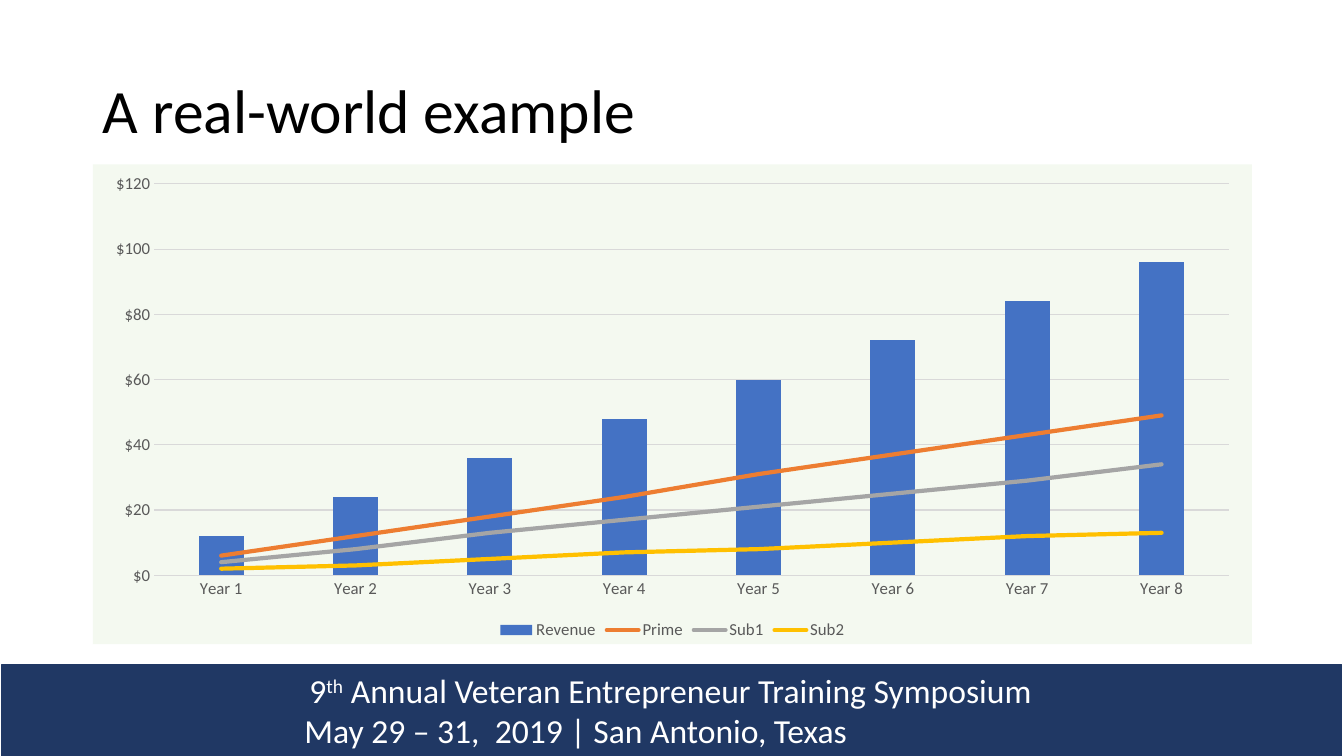
from dataclasses import dataclass

from lxml.etree import SubElement
from pptx import Presentation
from pptx.chart.chart import Chart
from pptx.chart.data import CategoryChartData
from pptx.dml.color import RGBColor
from pptx.enum.chart import XL_CHART_TYPE, XL_LEGEND_POSITION, XL_MARKER_STYLE, XL_TICK_MARK
from pptx.enum.shapes import MSO_SHAPE
from pptx.enum.text import MSO_ANCHOR, MSO_AUTO_SIZE, PP_ALIGN
from pptx.oxml import parse_xml
from pptx.oxml.ns import nsdecls, qn
from pptx.slide import Slide
from pptx.text.text import Font
from pptx.util import Cm, Pt

NAVY, GREY, GRID = "203864", "595959", "D9D9D9"
TITLE_FONT = {"name": "Calibri", "size": Pt(44)}
BANNER_FONT = {"name": "Calibri", "size": Pt(24)}
CHART_FONT = {"name": "Calibri", "size": Pt(12)}


@dataclass
class Series:
    name: str
    values: list[int]
    color: str


@dataclass
class BannerLine:
    indent: float
    runs: list[tuple[str, int]]  # text and baseline shift in percent


YEARS = [f"Year {n}" for n in range(1, 9)]
SERIES = [
    Series("Revenue", [12, 24, 36, 48, 60, 72, 84, 96], "4472C4"),
    Series("Prime", [6, 12, 18, 24, 31, 37, 43, 49], "ED7D31"),
    Series("Sub1", [4, 8, 13, 17, 21, 25, 29, 34], "A5A5A5"),
    Series("Sub2", [2, 3, 5, 7, 8, 10, 12, 13], "FFC000"),
]
BANNER = [
    BannerLine(7.5, [("9", 0), ("th", 30), (" Annual Veteran Entrepreneur Training Symposium", 0)]),
    BannerLine(7.37, [("May 29 – 31,  2019 | San Antonio, Texas", 0)]),
]


def rgb(color: str) -> RGBColor:
    return RGBColor.from_string(color)


def set_attrs(target: object, values: dict) -> None:
    for name, value in values.items():
        setattr(target, name, value)


def set_font(font: Font, values: dict, color: str) -> None:
    set_attrs(font, values)
    font.color.rgb = rgb(color)


def set_line(line, color: str, width: float) -> None:
    line.color.rgb = rgb(color)
    line.width = Pt(width)


def add_banner(s: Slide) -> None:
    sp = s.shapes.add_shape(MSO_SHAPE.RECTANGLE, Cm(0.05), Cm(16.74), Cm(33.76), Cm(2.31))
    sp.shadow.inherit = False
    sp.fill.solid()
    sp.fill.fore_color.rgb = rgb(NAVY)
    set_line(sp.line, NAVY, 1)
    tf = sp.text_frame
    set_attrs(tf, {"word_wrap": True, "vertical_anchor": MSO_ANCHOR.MIDDLE})
    for i, line in enumerate(BANNER):
        p = tf.add_paragraph() if i else tf.paragraphs[0]
        p.alignment = PP_ALIGN.LEFT
        p._p.get_or_add_pPr().set("marL", str(Cm(line.indent)))
        for text, shift in line.runs:
            r = p.add_run()
            r.text = text
            set_font(r.font, BANNER_FONT, "FFFFFF")
            if shift:
                r._r.get_or_add_rPr().set("baseline", str(shift * 1000))


def set_title(s: Slide) -> None:
    sp = s.shapes.title
    set_attrs(sp, {"left": Cm(2.34), "top": Cm(1.02), "width": Cm(29.21), "height": Cm(3.68)})
    tf = sp.text_frame
    set_attrs(tf, {"auto_size": MSO_AUTO_SIZE.NONE, "word_wrap": True,
                   "vertical_anchor": MSO_ANCHOR.MIDDLE})
    p = tf.paragraphs[0]
    set_attrs(p, {"alignment": PP_ALIGN.LEFT, "line_spacing": 0.9})
    r = p.add_run()
    r.text = "A real-world example"
    set_font(r.font, TITLE_FONT, "000000")


def move_to_lines(chart: Chart) -> None:
    """Turn every series after the first into a line on the same axes."""
    bars = chart.plots[0]._element
    lines = parse_xml(
        f'<c:lineChart {nsdecls("c")}><c:grouping val="standard"/><c:varyColors val="0"/></c:lineChart>')
    for ser in bars.findall(qn("c:ser"))[1:]:
        for bar_only in ser.findall(qn("c:invertIfNegative")):
            ser.remove(bar_only)
        lines.append(ser)
    SubElement(lines, qn("c:marker")).set("val", "1")
    for axis in bars.findall(qn("c:axId")):
        SubElement(lines, qn("c:axId")).set("val", axis.get("val"))
    bars.addnext(lines)


def fill_background(chart: Chart, color: str, opacity: int) -> None:
    space = chart._chartSpace
    space.find(qn("c:chart")).addnext(parse_xml(
        f'<c:spPr {nsdecls("c", "a")}><a:solidFill><a:srgbClr val="{color}">'
        f'<a:alpha val="{opacity * 1000}"/></a:srgbClr></a:solidFill>'
        f'<a:ln><a:noFill/></a:ln></c:spPr>'))


def format_axes(chart: Chart) -> None:
    cat, val = chart.category_axis, chart.value_axis
    for axis in (cat, val):
        set_attrs(axis, {"major_tick_mark": XL_TICK_MARK.NONE, "minor_tick_mark": XL_TICK_MARK.NONE})
        set_font(axis.tick_labels.font, CHART_FONT, GREY)
    set_line(cat.format.line, GRID, 0.75)
    set_attrs(val, {"minimum_scale": 0, "maximum_scale": 120, "major_unit": 20})
    set_attrs(val.tick_labels, {"number_format": '"$"#,##0', "number_format_is_linked": False})
    val.format.line.fill.background()
    set_line(val.major_gridlines.format.line, GRID, 0.75)


def add_revenue_chart(s: Slide) -> None:
    data = CategoryChartData()
    data.categories = YEARS
    for item in SERIES:
        data.add_series(item.name, item.values)
    chart = s.shapes.add_chart(XL_CHART_TYPE.COLUMN_CLUSTERED, Cm(2.34), Cm(4.14),
                               Cm(29.21), Cm(12.09), data).chart
    chart.has_title = False
    set_font(chart.font, CHART_FONT, GREY)
    move_to_lines(chart)
    fill_background(chart, "C5E0B4", 19)
    format_axes(chart)

    bars, lines = chart.plots
    set_attrs(bars, {"gap_width": 199, "vary_by_categories": False})
    fill = bars.series[0].format.fill
    fill.solid()
    fill.fore_color.rgb = rgb(SERIES[0].color)
    for ser, item in zip(lines.series, SERIES[1:]):
        set_line(ser.format.line, item.color, 3)
        ser.format.line._get_or_add_ln().set("cap", "rnd")
        ser.marker.style = XL_MARKER_STYLE.NONE
        ser.smooth = False

    chart.has_legend = True
    set_attrs(chart.legend, {"position": XL_LEGEND_POSITION.BOTTOM, "include_in_layout": False})
    set_font(chart.legend.font, CHART_FONT, GREY)


def main() -> None:
    prs = Presentation()
    set_attrs(prs, {"slide_width": Cm(33.87), "slide_height": Cm(19.05)})
    s = prs.slides.add_slide(prs.slide_layouts[5])
    add_banner(s)
    set_title(s)
    add_revenue_chart(s)
    prs.save("out.pptx")


if __name__ == "__main__":
    main()
